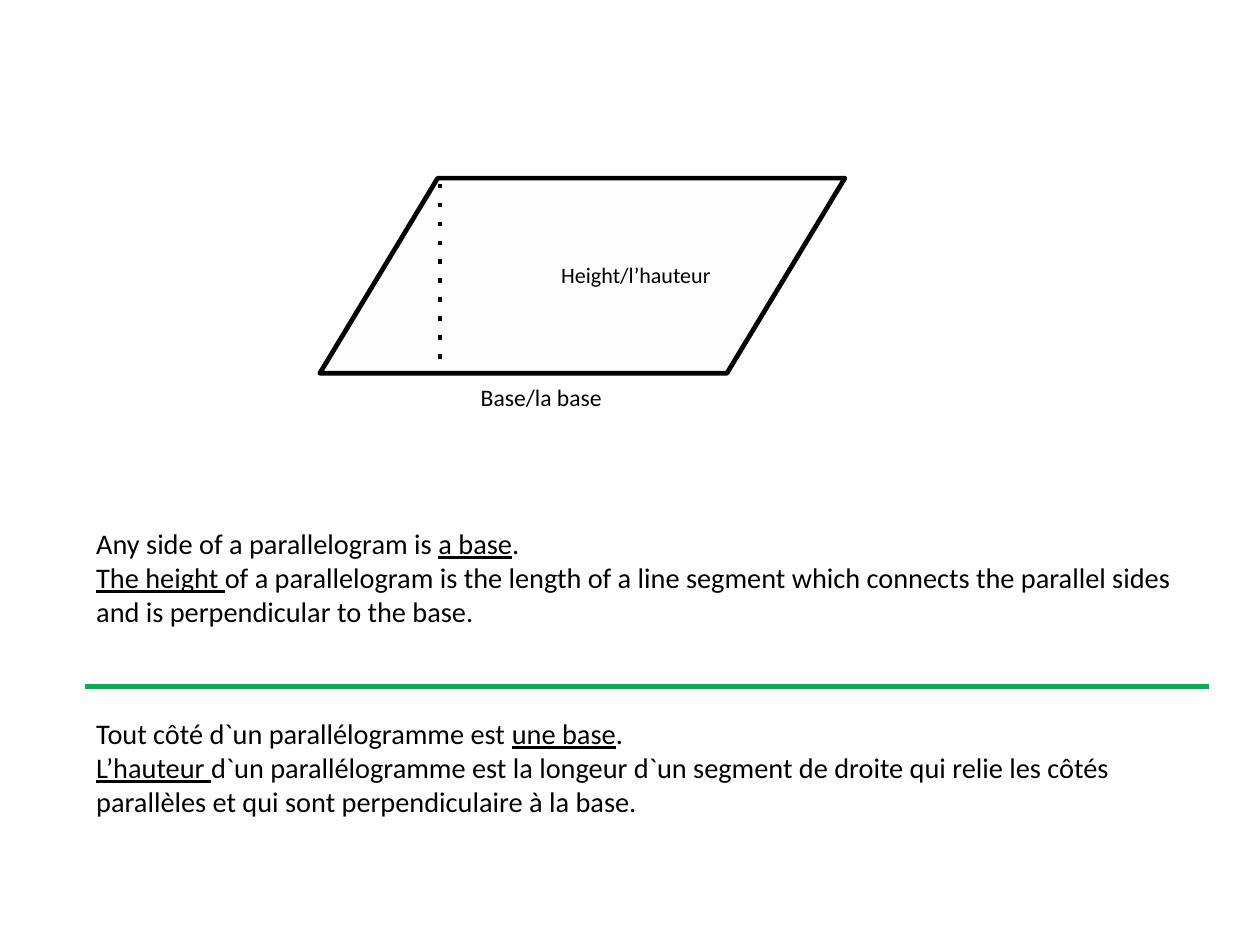
from dataclasses import dataclass

import pptx
import pptx.dml.color
import pptx.enum.text
import pptx.oxml
import pptx.oxml.ns
import pptx.util
from pptx.util import Inches


@dataclass(frozen=True)
class Theme:
    font: str = "Calibri"
    ink: str = "000000"
    shape_fill: str = "FDFDFD"
    divider: str = "00B050"
    line_width: int = 3
    body_size: int = 18
    base_size: int = 15
    height_size: int = 14


THEME = Theme()


def rgb(value):
    return pptx.dml.color.RGBColor.from_string(value)


def style_line(line, color):
    line.color.rgb = rgb(color)
    line.width = pptx.util.Pt(THEME.line_width)


def add_line(slide, start, end, color=THEME.ink, dash=None):
    connector = slide.shapes.add_connector(
        pptx.enum.shapes.MSO_CONNECTOR.STRAIGHT,
        *(Inches(value) for value in (*start, *end)))
    style_line(connector.line, color)
    properties = connector.element.spPr
    if dash:
        outline = properties.find(pptx.oxml.ns.qn("a:ln"))
        outline.append(pptx.oxml.parse_xml(
            f'<a:prstDash {pptx.oxml.ns.nsdecls("a")} val="{dash}"/>'))
    properties.append(pptx.oxml.parse_xml(
        f'<a:effectLst {pptx.oxml.ns.nsdecls("a")}/>'))


def add_polygon(slide, points):
    corners = [(Inches(x), Inches(y)) for x, y in points]
    builder = slide.shapes.build_freeform(*corners[0])
    builder.add_line_segments(corners[1:], close=True)
    shape = builder.convert_to_shape()
    shape.shadow.inherit = False
    shape.fill.solid()
    shape.fill.fore_color.rgb = rgb(THEME.shape_fill)
    style_line(shape.line, THEME.ink)


def add_text(slide, paragraphs, left, top, width, height,
             size=THEME.body_size, color=THEME.ink):
    """Each paragraph is a list of (text, underlined) runs."""
    box = slide.shapes.add_textbox(*map(Inches, (left, top, width, height)))
    frame = box.text_frame
    frame.word_wrap = True
    frame.auto_size = pptx.enum.text.MSO_AUTO_SIZE.SHAPE_TO_FIT_TEXT
    for index, runs in enumerate(paragraphs):
        paragraph = frame.add_paragraph() if index else frame.paragraphs[0]
        for text, underlined in runs:
            run = paragraph.add_run()
            run.text = text
            run.font.name = THEME.font
            run.font.size = pptx.util.Pt(size)
            run.font.color.rgb = rgb(color)
            run.font.underline = underlined


def main():
    presentation = pptx.Presentation()
    presentation.slide_width = Inches(11.11)
    presentation.slide_height = Inches(8.33)
    slide = presentation.slides.add_slide(presentation.slide_layouts[6])

    # Parallelogram with its height
    add_polygon(slide, [(2.82, 3.29), (3.86, 1.57), (7.45, 1.57), (6.41, 3.29)])
    add_line(slide, (3.88, 1.62), (3.88, 3.29), dash="dot")
    add_text(slide, [[("Base/la base", False)]], 4.14, 3.33, 1.42, 0.35,
             size=THEME.base_size)
    add_text(slide, [[("Height/l’hauteur", False)]], 4.85, 2.26, 1.53, 0.34,
             size=THEME.height_size)

    # English definitions
    add_text(slide, [
        [("Any side of a parallelogram is ", False), ("a base", True), (".", False)],
        [("The height ", True),
         ("of a parallelogram is the length of a line segment which connects "
          "the parallel sides and is perpendicular to the base.", False)],
    ], 0.75, 4.59, 9.86, 1.01)

    # Divider between the languages
    add_line(slide, (0.75, 6.05), (10.66, 6.05), color=THEME.divider)

    # French definitions
    add_text(slide, [
        [("Tout côté d`un parallélogramme est ", False), ("une base", True), (".", False)],
        [("L’hauteur ", True),
         ("d`un parallélogramme est la longeur d`un segment de droite qui relie "
          "les côtés parallèles et qui sont perpendiculaire à la base.", False)],
    ], 0.75, 6.26, 9.91, 1.01)

    presentation.save("out.pptx")


if __name__ == "__main__":
    main()
